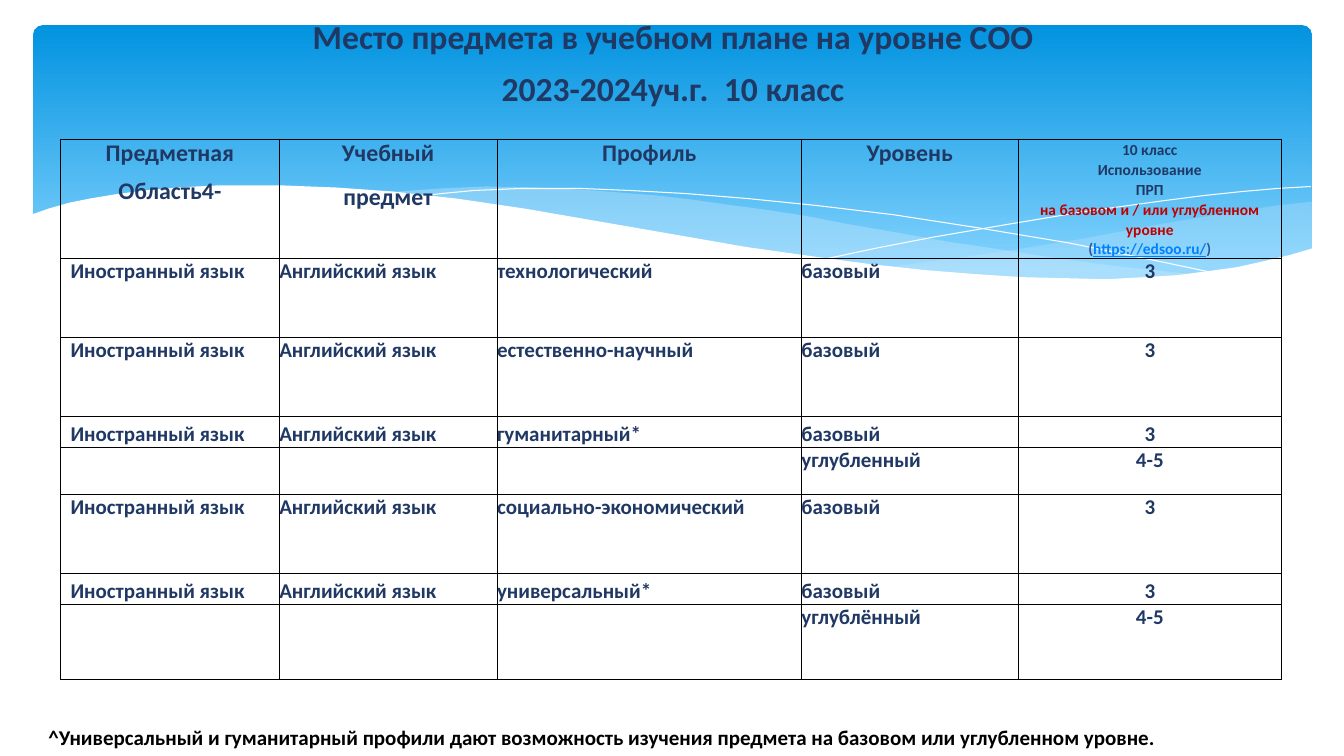
from dataclasses import dataclass

from lxml import etree
from pptx import Presentation
from pptx.dml.color import RGBColor
from pptx.enum.shapes import MSO_SHAPE
from pptx.enum.text import MSO_ANCHOR, MSO_AUTO_SIZE, PP_ALIGN
from pptx.oxml.ns import qn
from pptx.util import Inches, Pt

ROUNDED = MSO_SHAPE.ROUNDED_RECTANGLE
TOP, BOTTOM = MSO_ANCHOR.TOP, MSO_ANCHOR.BOTTOM
LEFT, CENTER = PP_ALIGN.LEFT, PP_ALIGN.CENTER
FIXED_SIZE = MSO_AUTO_SIZE.NONE


@dataclass(frozen=True)
class Theme:
    font: str = "Calibri"
    navy: str = "203864"
    red: str = "C00000"
    blue: str = "2F5597"
    link: str = "0080FF"
    black: str = "000000"
    white: str = "FFFFFF"
    sky_top: str = "0293E0"
    sky_bottom: str = "83D3FE"
    wave: str = "C6E7FC"
    title_size: float = 24
    header_size: float = 17
    note_size: float = 11
    body_size: float = 15
    border: float = 0.75


THEME = Theme()

RIGHT_WAVE = [
    (13.01, 2), (12.65, 2.04), (12.27, 2.1), (11.88, 2.16), (11.47, 2.23),
    (10.73, 2.37), (10.05, 2.48), (9.41, 2.57), (8.82, 2.65), (9.21, 2.69),
    (9.58, 2.72), (9.93, 2.75), (10.25, 2.77), (10.71, 2.78), (11.13, 2.77),
    (11.51, 2.75), (11.86, 2.72), (12.18, 2.67), (12.57, 2.59), (13.01, 2.47)]
MIDDLE_WAVE = [
    (11.9, 2.73), (11.54, 2.69), (11.16, 2.65), (10.76, 2.6), (10.34, 2.54),
    (9.89, 2.47), (9.41, 2.4), (8.91, 2.31), (8.39, 2.22), (7.98, 2.14),
    (7.59, 2.08), (7.21, 2.03), (6.86, 1.98), (6.52, 1.94), (5.89, 1.89),
    (5.32, 1.86), (4.82, 1.85), (4.37, 1.87), (3.82, 1.91), (4.31, 1.96),
    (4.83, 2.03), (5.39, 2.11), (5.99, 2.22), (6.54, 2.32), (7.06, 2.4),
    (7.55, 2.48), (8.02, 2.55), (8.46, 2.61), (8.87, 2.66), (9.26, 2.7),
    (9.63, 2.74), (9.98, 2.76), (10.46, 2.78), (11.04, 2.78), (11.56, 2.76)]
FALLING_LINE = [
    (4.12, 1.95), (4.38, 1.92), (4.7, 1.89), (5.16, 1.87), (5.77, 1.87),
    (6.25, 1.89), (6.8, 1.92), (7.42, 1.97), (8.11, 2.04), (8.86, 2.13),
    (9.7, 2.26), (10.6, 2.41), (11.58, 2.61), (12.1, 2.72)]
RISING_LINE = [
    (8.18, 2.57), (8.7, 2.46), (9.27, 2.35), (9.97, 2.23), (10.75, 2.1),
    (11.55, 1.99), (11.94, 1.94), (12.32, 1.9), (12.67, 1.87), (13, 1.85)]
WHITE_WAVE = [
    (13.03, 2.46), (12.79, 2.53), (12.54, 2.59), (12.27, 2.65), (11.98, 2.69),
    (11.67, 2.73), (11.34, 2.75), (10.97, 2.77), (10.58, 2.76), (10.15, 2.75),
    (9.69, 2.72), (9.18, 2.68), (8.63, 2.62), (8.04, 2.54), (7.4, 2.45),
    (6.71, 2.33), (5.96, 2.2), (5.21, 2.07), (4.53, 1.97), (3.9, 1.9),
    (3.33, 1.86), (2.82, 1.84), (2.14, 1.84), (1.76, 1.86), (1.42, 1.89),
    (1.13, 1.93), (0.89, 1.97), (0.69, 2.01), (0.48, 2.07), (0.31, 2.13),
    (0.31, 3.29), (13.03, 3.29)]

COLUMN_WIDTHS = [2.17, 2.16, 3.02, 2.15, 2.61]
ROW_HEIGHTS = [1.15, 0.78, 0.78, 0.31, 0.47, 0.78, 0.31, 0.74]
HEADERS = [(["Предметная", "Область4-"], 6.3), (["Учебный", "предмет"], 10.5),
           (["Профиль"], 0), (["Уровень"], 0)]
NOTE_LINES = [
    [("10 класс", THEME.navy)],
    [("Использование", THEME.navy)],
    [("ПРП", THEME.navy)],
    [("на базовом и / или углубленном уровне", THEME.red)],
    [("(", THEME.blue), ("https://edsoo.ru/", THEME.link), (")", THEME.blue)]]
SUBJECT = ["Иностранный язык", "Английский язык"]
ROWS = [
    SUBJECT + ["технологический", "базовый", "3"],
    SUBJECT + ["естественно-научный", "базовый", "3"],
    SUBJECT + ["гуманитарный*", "базовый", "3"],
    ["", "", "", "углубленный", "4-5"],
    SUBJECT + ["социально-экономический", "базовый", "3"],
    SUBJECT + ["универсальный*", "базовый", "3"],
    ["", "", "", "углублённый", "4-5"]]
LOW_ROWS = (3, 6)


def rgb(value):
    return RGBColor.from_string(value)


def style(paragraph, size, color=THEME.navy, align=LEFT):
    paragraph.alignment = align
    font = paragraph.font
    font.name, font.size, font.bold = THEME.font, Pt(size), True
    font.color.rgb = rgb(color)


def write_lines(frame, lines, size, color=THEME.navy, align=LEFT, gap=0):
    frame.text = "\n".join(lines)
    for paragraph in frame.paragraphs:
        style(paragraph, size, color, align)
    if gap:
        frame.paragraphs[0].space_after = Pt(gap)


def clear_margins(box):
    box.margin_left = box.margin_right = box.margin_top = box.margin_bottom = 0


def add_sky(slide):
    sky = slide.shapes.add_shape(ROUNDED, Inches(0.33), Inches(0.25), Inches(12.68), Inches(2.7))
    sky.adjustments[0] = 0.034
    sky.shadow.inherit = False
    sky.line.fill.background()
    sky.fill.gradient()
    sky.fill.gradient_angle = 270
    stops = zip(sky.fill.gradient_stops, (THEME.sky_top, THEME.sky_bottom), (0, 0.9))
    for stop, color, position in stops:
        stop.color.rgb = rgb(color)
        stop.position = position


def add_curve(slide, points, closed):
    corners = [(Inches(x), Inches(y)) for x, y in points]
    builder = slide.shapes.build_freeform(*corners[0])
    builder.add_line_segments(corners[1:], close=closed)
    shape = builder.convert_to_shape()
    shape.shadow.inherit = False
    return shape


def add_wave(slide, points, color, opacity=100):
    wave = add_curve(slide, points, True)
    wave.line.fill.background()
    wave.fill.solid()
    wave.fill.fore_color.rgb = rgb(color)
    if opacity < 100:
        fill_color = wave.element.spPr.find(qn("a:solidFill"))[0]
        etree.SubElement(fill_color, qn("a:alpha"), val=str(opacity * 1000))


def add_hairline(slide, points):
    curve = add_curve(slide, points, False)
    curve.fill.background()
    curve.line.color.rgb = rgb(THEME.white)
    curve.line.width = 0


def add_title(slide, lines):
    title = slide.shapes.title
    title.element.getparent().append(title.element)
    title.left, title.top = Inches(1.32), Inches(0.16)
    title.width, title.height = Inches(10.71), Inches(0.93)
    frame = title.text_frame
    clear_margins(frame)
    frame.auto_size = FIXED_SIZE
    frame.vertical_anchor = TOP
    write_lines(frame, lines, THEME.title_size, align=CENTER, gap=8.4)


def format_cell(cell, anchor):
    clear_margins(cell)
    cell.vertical_anchor = anchor
    properties = cell._tc.get_or_add_tcPr()
    for side in ("a:lnL", "a:lnR", "a:lnT", "a:lnB"):
        line = etree.SubElement(properties, qn(side), w=str(Pt(THEME.border)))
        fill = etree.SubElement(line, qn("a:solidFill"))
        etree.SubElement(fill, qn("a:srgbClr"), val=THEME.black)
    cell.fill.background()


def write_note(frame):
    for index, pieces in enumerate(NOTE_LINES):
        paragraph = frame.paragraphs[0] if index == 0 else frame.add_paragraph()
        style(paragraph, THEME.note_size, align=CENTER)
        if len(pieces) == 1:
            paragraph.line_spacing = Pt(14.4)
        for text, color in pieces:
            run = paragraph.add_run()
            run.text = text
            run.font.color.rgb = rgb(color)
            if color == THEME.link:
                run.font.underline = True


def add_plan_table(slide):
    table = slide.shapes.add_table(
        len(ROW_HEIGHTS), len(COLUMN_WIDTHS), Inches(0.6), Inches(1.38),
        Inches(sum(COLUMN_WIDTHS)), Inches(sum(ROW_HEIGHTS))).table
    table.first_row = table.horz_banding = False
    for column, width in zip(table.columns, COLUMN_WIDTHS):
        column.width = Inches(width)
    for row, height in zip(table.rows, ROW_HEIGHTS):
        row.height = Inches(height)
    for index, (lines, gap) in enumerate(HEADERS):
        cell = table.cell(0, index)
        format_cell(cell, TOP)
        write_lines(cell.text_frame, lines, THEME.header_size, align=CENTER, gap=gap)
    note = table.cell(0, len(HEADERS))
    format_cell(note, BOTTOM)
    write_note(note.text_frame)
    for row_index, texts in enumerate(ROWS, 1):
        for column_index, text in enumerate(texts):
            cell = table.cell(row_index, column_index)
            format_cell(cell, BOTTOM if row_index in LOW_ROWS else TOP)
            if column_index == 0:
                cell.margin_left = Inches(0.1)
            align = CENTER if column_index == 4 else LEFT
            write_lines(cell.text_frame, [text], THEME.body_size, align=align)


def add_footnote(slide, text):
    box = slide.shapes.add_textbox(Inches(0.48), Inches(7.19), Inches(11.76), Inches(0.23))
    clear_margins(box.text_frame)
    box.text_frame.word_wrap = False
    write_lines(box.text_frame, [text], THEME.body_size, THEME.black)


def main():
    presentation = Presentation()
    presentation.slide_width, presentation.slide_height = Inches(13.33), Inches(7.5)
    slide = presentation.slides.add_slide(presentation.slide_layouts[5])
    add_sky(slide)
    add_wave(slide, RIGHT_WAVE, THEME.wave, 29)
    add_wave(slide, MIDDLE_WAVE, THEME.wave, 40)
    add_hairline(slide, FALLING_LINE)
    add_hairline(slide, RISING_LINE)
    add_wave(slide, WHITE_WAVE, THEME.white)
    add_title(slide, ["Место предмета в учебном плане на уровне СОО", "2023-2024уч.г.\u00a0 10 класс".replace("\u00a0", " ")])
    add_plan_table(slide)
    add_footnote(slide, "^Универсальный и гуманитарный профили дают возможность изучения предмета на базовом или углубленном уровне.")
    presentation.save("out.pptx")


if __name__ == "__main__":
    main()
